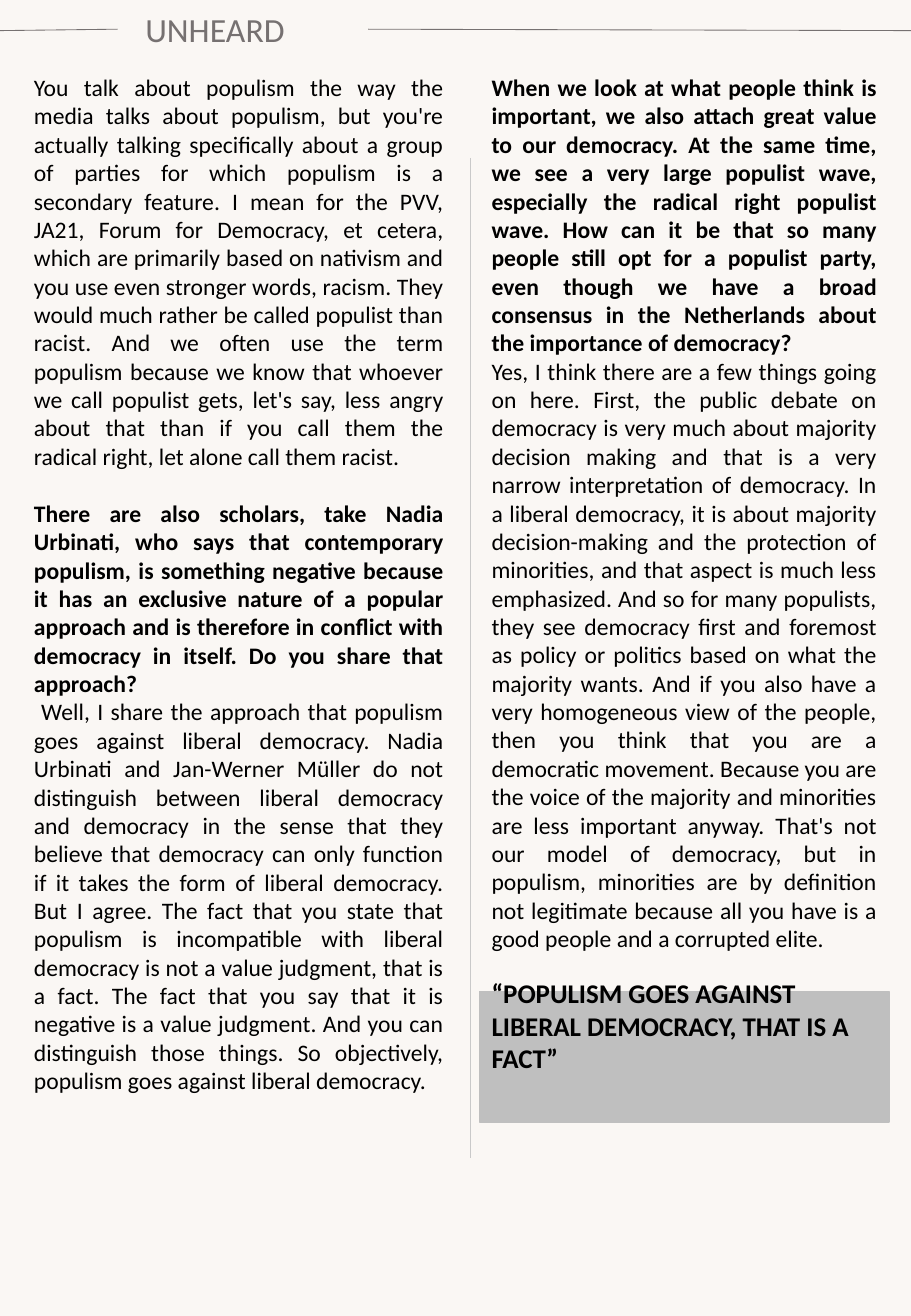
from dataclasses import dataclass

import lxml.etree
import pptx
import pptx.dml.color
import pptx.enum.shapes
import pptx.enum.text
import pptx.oxml.ns
import pptx.util

Cm = pptx.util.Cm
Pt = pptx.util.Pt
Align = pptx.enum.text.PP_ALIGN


@dataclass(frozen=True)
class Theme:
    font: str = "Calibri"
    background: str = "FAF7F4"
    ink: str = "000000"
    heading: str = "767171"
    divider: str = "C9C9C9"
    quote_panel: str = "BFBFBF"
    body_size: float = 14
    quote_size: float = 16
    heading_size: float = 20
    rule_width: float = 0.5
    panel_line_width: float = 1


THEME = Theme()


@dataclass(frozen=True)
class Passage:
    text: str
    bold: bool = False
    size: float = THEME.body_size
    color: str = THEME.ink
    alignment: Align = Align.JUSTIFY
    space_before: float = 0


@dataclass(frozen=True)
class TextBlock:
    left: float
    top: float
    width: float
    height: float
    passages: tuple[Passage, ...]


@dataclass(frozen=True)
class Rule:
    start: tuple[float, float]
    end: tuple[float, float]
    color: str


PAGE_WIDTH, PAGE_HEIGHT = 19.05, 27.51
COLUMN_TOP = 1.4
RIGHT_COLUMN_LEFT, RIGHT_COLUMN_WIDTH = 10.03, 8.56
DIVIDER_LEFT = 9.83

RULES = (
    Rule((DIVIDER_LEFT, 3.3), (DIVIDER_LEFT, 24.21), THEME.divider),
    Rule((0, 0.64), (2.46, 0.61), THEME.heading),
    Rule((7.7, 0.61), (PAGE_WIDTH, 0.64), THEME.heading),
)

LEFT_COLUMN = TextBlock(0.46, COLUMN_TOP, 9.07, 23.6, (
    Passage(
        "You talk about populism the way the media talks about populism, but you're "
        "actually talking specifically about a group of parties for which populism is a "
        "secondary feature. I mean for the PVV, JA21, Forum for Democracy, et cetera, "
        "which are primarily based on nativism and you use even stronger words, racism. "
        "They would much rather be called populist than racist. And we often use the term "
        "populism because we know that whoever we call populist gets, let's say, less "
        "angry about that than if you call them the radical right, let alone call them "
        "racist."),
    Passage(
        "There are also scholars, take Nadia Urbinati, who says that contemporary "
        "populism, is something negative because it has an exclusive nature of a popular "
        "approach and is therefore in conflict with democracy in itself. Do you share "
        "that approach?", bold=True, space_before=17),
    Passage(
        " Well, I share the approach that populism goes against liberal democracy. Nadia "
        "Urbinati and Jan-Werner Müller do not distinguish between liberal democracy and "
        "democracy in the sense that they believe that democracy can only function if it "
        "takes the form of liberal democracy. But I agree. The fact that you state that "
        "populism is incompatible with liberal democracy is not a value judgment, that is "
        "a fact. The fact that you say that it is negative is a value judgment. And you "
        "can distinguish those things. So objectively, populism goes against liberal "
        "democracy."),
))

RIGHT_COLUMN = TextBlock(RIGHT_COLUMN_LEFT, COLUMN_TOP, RIGHT_COLUMN_WIDTH, 22.22, (
    Passage(
        "When we look at what people think is important, we also attach great value to "
        "our democracy. At the same time, we see a very large populist wave, especially "
        "the radical right populist wave. How can it be that so many people still opt for "
        "a populist party, even though we have a broad consensus in the Netherlands about "
        "the importance of democracy?", bold=True),
    Passage(
        "Yes, I think there are a few things going on here. First, the public debate on "
        "democracy is very much about majority decision making and that is a very narrow "
        "interpretation of democracy. In a liberal democracy, it is about majority "
        "decision-making and the protection of minorities, and that aspect is much less "
        "emphasized. And so for many populists, they see democracy first and foremost as "
        "policy or politics based on what the majority wants. And if you also have a very "
        "homogeneous view of the people, then you think that you are a democratic "
        "movement. Because you are the voice of the majority and minorities are less "
        "important anyway. That's not our model of democracy, but in populism, minorities "
        "are by definition not legitimate because all you have is a good people and a "
        "corrupted elite."),
    Passage(
        "“POPULISM GOES AGAINST LIBERAL DEMOCRACY, THAT IS A FACT”", bold=True,
        size=THEME.quote_size, alignment=Align.LEFT, space_before=14.5),
))

HEADING = TextBlock(2.79, 0.05, 4.9, 1.12, (
    Passage("UNHEARD", size=THEME.heading_size, color=THEME.heading, alignment=Align.LEFT),
))


def rgb(color: str) -> pptx.dml.color.RGBColor:
    return pptx.dml.color.RGBColor.from_string(color)


def draw_quote_panel(slide: pptx.slide.Slide) -> None:
    panel = slide.shapes.add_shape(
        pptx.enum.shapes.MSO_SHAPE.RECTANGLE,
        Cm(RIGHT_COLUMN_LEFT), Cm(20.73), Cm(RIGHT_COLUMN_WIDTH), Cm(2.72))
    panel.shadow.inherit = False
    panel.fill.solid()
    panel.fill.fore_color.rgb = rgb(THEME.quote_panel)
    panel.line.color.rgb = rgb(THEME.quote_panel)
    panel.line.width = Pt(THEME.panel_line_width)


def draw_rule(slide: pptx.slide.Slide, rule: Rule) -> None:
    connector = slide.shapes.add_connector(
        pptx.enum.shapes.MSO_CONNECTOR.STRAIGHT,
        *(Cm(length) for length in rule.start + rule.end))
    connector.line.color.rgb = rgb(rule.color)
    connector.line.width = Pt(THEME.rule_width)
    lxml.etree.SubElement(connector._element.spPr, pptx.oxml.ns.qn("a:effectLst"))


def draw_text_block(slide: pptx.slide.Slide, block: TextBlock) -> None:
    box = slide.shapes.add_textbox(
        Cm(block.left), Cm(block.top), Cm(block.width), Cm(block.height))
    frame = box.text_frame
    frame.word_wrap = True
    frame.auto_size = pptx.enum.text.MSO_AUTO_SIZE.SHAPE_TO_FIT_TEXT
    for index, passage in enumerate(block.passages):
        paragraph = frame.add_paragraph() if index else frame.paragraphs[0]
        paragraph.alignment = passage.alignment
        if passage.space_before:
            paragraph.space_before = Pt(passage.space_before)
        run = paragraph.add_run()
        run.text = passage.text
        run.font.name = THEME.font
        run.font.size = Pt(passage.size)
        run.font.bold = passage.bold
        run.font.color.rgb = rgb(passage.color)


def main() -> None:
    presentation = pptx.Presentation()
    presentation.slide_width = Cm(PAGE_WIDTH)
    presentation.slide_height = Cm(PAGE_HEIGHT)
    slide = presentation.slides.add_slide(presentation.slide_layouts[6])
    slide.background.fill.solid()
    slide.background.fill.fore_color.rgb = rgb(THEME.background)
    draw_quote_panel(slide)
    for rule in RULES:
        draw_rule(slide, rule)
    for block in (LEFT_COLUMN, RIGHT_COLUMN, HEADING):
        draw_text_block(slide, block)
    presentation.save("out.pptx")


if __name__ == "__main__":
    main()
